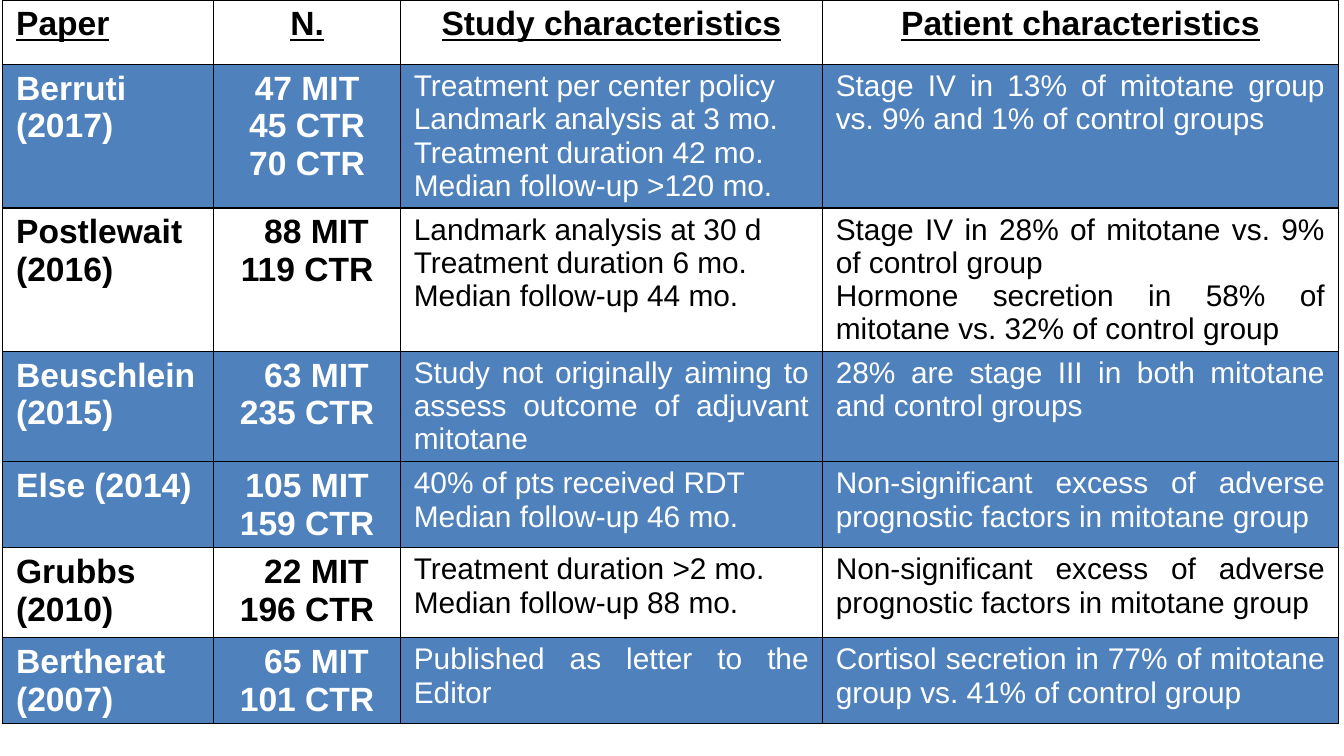
"""Build a slide with one table comparing studies of adjuvant mitotane."""
from typing import NamedTuple

from lxml.etree import SubElement
from pptx import Presentation
from pptx.dml.color import RGBColor
from pptx.enum.text import PP_ALIGN as Align
from pptx.oxml.ns import qn
from pptx.util import Pt

BLACK, WHITE, BLUE = "000000", "FFFFFF", "4F81BD"
COLUMN_WIDTHS = (113.04, 100.08, 226.08, 276.48)
HEADINGS = ("Paper", "N.", "Study characteristics", "Patient characteristics")
HEADING_HEIGHT = 34.56


class Study(NamedTuple):
    paper: str
    groups: tuple[str, ...]
    design: tuple[str, ...]
    patients: tuple[str, ...]
    height: float
    shaded: bool = True


STUDIES = (
    Study("Berruti (2017)", ("47 MIT", "45 CTR", "70 CTR"),
          ("Treatment per center policy", "Landmark analysis at 3 mo.",
           "Treatment duration 42 mo.", "Median follow-up >120 mo."),
          ("Stage IV in 13% of mitotane group vs. 9% and 1% of control groups",),
          39.6),
    Study("Postlewait (2016)", ("88 MIT", "119 CTR"),
          ("Landmark analysis at 30 d", "Treatment duration 6 mo.",
           "Median follow-up 44 mo."),
          ("Stage IV in 28% of mitotane vs. 9% of control group",
           "Hormone secretion in 58% of mitotane vs. 32% of control group"),
          22.32, shaded=False),
    Study("Beuschlein (2015)", ("63 MIT", "235 CTR"),
          ("Study not originally aiming to assess outcome of adjuvant mitotane",),
          ("28% are stage III in both mitotane and control groups",), 56.16),
    Study("Else (2014)", ("105 MIT", "159 CTR"),
          ("40% of pts received RDT", "Median follow-up 46 mo."),
          ("Non-significant excess of adverse prognostic factors in mitotane group",),
          22.32),
    Study("Grubbs (2010)", ("22 MIT", "196 CTR"),
          ("Treatment duration >2 mo.", "Median follow-up 88 mo."),
          ("Non-significant excess of adverse prognostic factors in mitotane group",),
          48.24, shaded=False),
    Study("Bertherat (2007)", ("65 MIT", "101 CTR"),
          ("Published as letter to the Editor",),
          ("Cortisol secretion in 77% of mitotane group vs. 41% of control group",),
          39.6),
)


def paint(target, color: str) -> None:
    """Give a fill or a font a solid colour."""
    if hasattr(target, "solid"):
        target.solid()
        target.fore_color.rgb = RGBColor.from_string(color)
    else:
        target.color.rgb = RGBColor.from_string(color)


def add_borders(cell) -> None:
    """Draw a thin black line on each side of a cell."""
    properties = cell._tc.get_or_add_tcPr()
    for index, side in enumerate(("a:lnL", "a:lnR", "a:lnT", "a:lnB")):
        line = properties.makeelement(qn(side), {"w": str(Pt(1))})
        SubElement(SubElement(line, qn("a:solidFill")), qn("a:srgbClr"), val=BLACK)
        properties.insert(index, line)


def write(para, text: str, *, size: float = 18, color: str = BLACK,
          bold: bool = True, underline: bool = False,
          align: Align = Align.LEFT, indent: float = 0) -> None:
    """Write formatted text into a paragraph."""
    para.alignment = align
    if indent:
        para._p.get_or_add_pPr().set("marL", str(Pt(indent)))
    span = para.add_run()
    span.text = text
    span.font.name = "Arial"
    span.font.size = Pt(size)
    span.font.bold = bold
    span.font.underline = underline
    paint(span.font, color)


def fill_cell(cell, lines: tuple[str, ...], *, fill: str = WHITE,
              indents: tuple[float, ...] = (), **style) -> None:
    """Fill a cell with one paragraph per line."""
    cell.margin_left = cell.margin_right = Pt(7.2)
    cell.margin_top = cell.margin_bottom = Pt(2.88)
    paint(cell.fill, fill)
    add_borders(cell)
    box = cell.text_frame
    for index, line in enumerate(lines):
        para = box.add_paragraph() if index else box.paragraphs[0]
        write(para, line, indent=indents[index] if indents else 0, **style)


def digit_indents(groups: tuple[str, ...]) -> tuple[float, ...]:
    """Indent shorter counts by one digit width per missing digit."""
    digits = [len(group.split()[0]) for group in groups]
    return tuple(10 * (max(digits) - count) for count in digits)


def add_study(row, study: Study) -> None:
    """Fill one table row with a study."""
    paper, groups, design, patients = row.cells
    look = {"fill": BLUE, "color": WHITE} if study.shaded else {}
    fill_cell(paper, (study.paper,), **look)
    fill_cell(groups, study.groups, align=Align.CENTER,
              indents=digit_indents(study.groups), **look)
    for cell, lines in ((design, study.design), (patients, study.patients)):
        fill_cell(cell, lines, size=16, bold=False, align=Align.JUSTIFY, **look)


def main() -> None:
    """Build and save the deck."""
    deck = Presentation()
    deck.slide_width, deck.slide_height = Pt(720), Pt(405)
    page = deck.slides.add_slide(deck.slide_layouts[6])
    frame = page.shapes.add_table(len(STUDIES) + 1, len(HEADINGS), Pt(1.44), Pt(0),
                                  Pt(sum(COLUMN_WIDTHS)), Pt(408.24))
    table = frame.table
    table.first_row = table.horz_banding = False
    for column, width in zip(table.columns, COLUMN_WIDTHS):
        column.width = Pt(width)
    heights = (HEADING_HEIGHT, *(study.height for study in STUDIES))
    for row, height in zip(table.rows, heights):
        row.height = Pt(height)
    frame.height = Pt(408.24)
    for index, heading in enumerate(HEADINGS):
        fill_cell(table.cell(0, index), (heading,), underline=True,
                  align=Align.CENTER if index else Align.LEFT)
    for index, study in enumerate(STUDIES, start=1):
        add_study(table.rows[index], study)
    deck.save("out.pptx")


if __name__ == "__main__":
    main()
